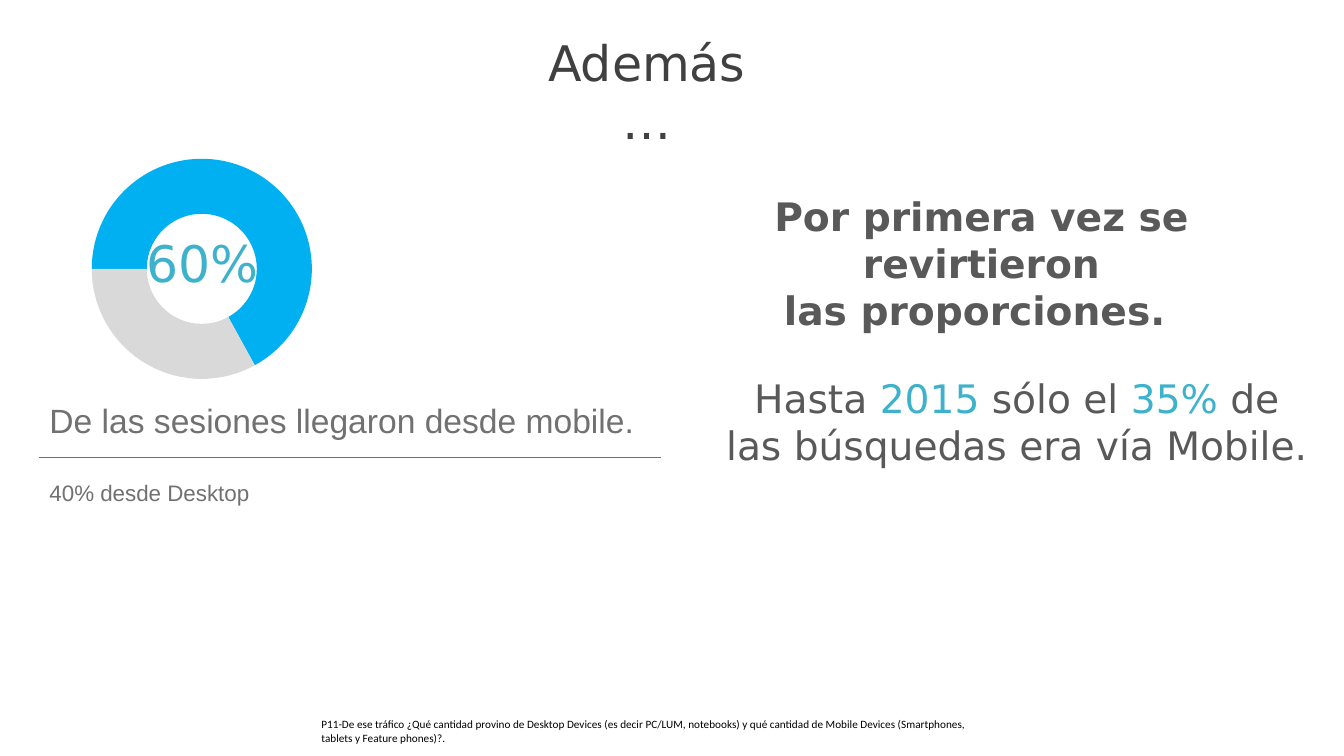
from lxml import etree
from pptx import Presentation
from pptx.chart.data import CategoryChartData
from pptx.dml.color import RGBColor
from pptx.enum.chart import XL_CHART_TYPE
from pptx.enum.shapes import MSO_CONNECTOR
from pptx.enum.text import PP_ALIGN
from pptx.oxml import parse_xml
from pptx.oxml.ns import nsdecls, qn
from pptx.util import Pt

DOUGHNUT = XL_CHART_TYPE.DOUGHNUT
STRAIGHT = MSO_CONNECTOR.STRAIGHT
LEFT, CENTER = PP_ALIGN.LEFT, PP_ALIGN.CENTER

BLACK = RGBColor(0x00, 0x00, 0x00)
CHARCOAL = RGBColor(0x40, 0x40, 0x40)
DARK_GRAY = RGBColor(0x59, 0x59, 0x59)
GRAY = RGBColor(0x71, 0x71, 0x71)
LIGHT_GRAY = RGBColor(0xD9, 0xD9, 0xD9)
BLUE = RGBColor(0x00, 0xB0, 0xF0)
TEAL = RGBColor(0x3E, 0xB1, 0xCC)

DISPLAY, BODY, NOTE = "DejaVu Sans", "Arial", "Calibri"


def add_text(s, box, paragraphs, font, size, color, align=LEFT, bold=False):
    tf = s.shapes.add_textbox(*map(Pt, box)).text_frame
    tf.word_wrap = True
    for i, runs in enumerate(paragraphs):
        p = tf.add_paragraph() if i else tf.paragraphs[0]
        p.alignment = align
        p.font.name, p.font.size, p.font.bold = font, Pt(size), bold
        p.font.color.rgb = color
        for text, accent in runs:
            r = p.add_run()
            r.text = text
            if accent:
                r.font.color.rgb = accent


def add_doughnut(s, box):
    data = CategoryChartData()
    data.categories = ["1", "2"]
    data.add_series("Series 1", (67, 33))
    chart = s.shapes.add_chart(DOUGHNUT, *map(Pt, box), data).chart
    chart.has_legend = False
    chart.has_title = False
    chart.font.name, chart.font.size = NOTE, Pt(10)
    chart.font.color.rgb = BLACK
    plot = chart.plots[0]
    plot.vary_by_categories = True
    for i, color in enumerate((BLUE, LIGHT_GRAY)):
        fmt = plot.series[0].points[i].format
        fmt.fill.solid()
        fmt.fill.fore_color.rgb = color
        fmt.line.fill.background()

    area = chart._chartSpace.chart.plotArea
    for tag, value in (("c:firstSliceAng", 270), ("c:holeSize", 75)):
        next(area.iter(qn(tag))).set("val", str(value))
    for old in area.findall(qn("c:layout")):
        area.remove(old)
    places = "".join(
        f'<c:{tag} val="{value}"/>'
        for tag, value in (("layoutTarget", "inner"), ("xMode", "edge"), ("yMode", "edge"),
                           ("x", 0.09), ("y", 0.06), ("w", 0.79), ("h", 0.74)))
    area.insert(0, parse_xml(
        f'<c:layout {nsdecls("c")}><c:manualLayout>{places}</c:manualLayout></c:layout>'))


def add_rule(s, x, y, w):
    line = s.shapes.add_connector(STRAIGHT, Pt(x), Pt(y), Pt(x + w), Pt(y))
    line.line.color.rgb = GRAY
    line.line.width = Pt(1)
    etree.SubElement(line._element.spPr, qn("a:effectLst"))


def add_mobile_share(s, x, y, w):
    add_doughnut(s, (x + 18.5, y + 0.7, 201, 212.5))
    add_text(s, (x + 66.3, y + 62, 111.6, 75), [[("60% ", None)]], DISPLAY, 36, TEAL, CENTER)
    add_text(s, (x, y + 182, w, 36), [[("De las sesiones llegaron desde mobile.", None)]],
             BODY, 24, GRAY)
    add_rule(s, x, y + 227, w)
    add_text(s, (x, y + 238.5, w, 26.6), [[("40% desde Desktop", None)]], BODY, 16, GRAY)


def add_message(s, x, y, w):
    add_text(s, (x, y, w, 108.7),
             [[("Por primera vez se revirtieron", None)], [("las proporciones. ", None)]],
             DISPLAY, 28, DARK_GRAY, CENTER, True)
    indent = 50.4
    add_text(s, (x + indent, y + 129.6, w - indent, 108.7),
             [[("Hasta ", None), ("2015 ", TEAL), ("sólo el ", None), ("35%", TEAL),
               (" de las búsquedas era vía Mobile.", None)]],
             DISPLAY, 28, DARK_GRAY, CENTER)


def main():
    prs = Presentation()
    prs.slide_width, prs.slide_height = Pt(960), Pt(540)
    s = prs.slides.add_slide(prs.slide_layouts[6])
    add_text(s, (370, 19.4, 184.3, 49.7), [[("Además…", None)]], DISPLAY, 35, CHARCOAL, CENTER)
    add_mobile_share(s, 28.2, 100, 444)
    add_message(s, 461, 134, 480)
    add_text(s, (222.5, 509.2, 480, 26.6),
             [[("P11-De ese tráfico ¿Qué cantidad provino de Desktop Devices (es decir PC/LUM, "
                "notebooks) y qué cantidad de Mobile Devices (Smartphones, tablets y Feature "
                "phones)?.", None)]], NOTE, 8, BLACK)
    prs.save("out.pptx")


if __name__ == "__main__":
    main()
